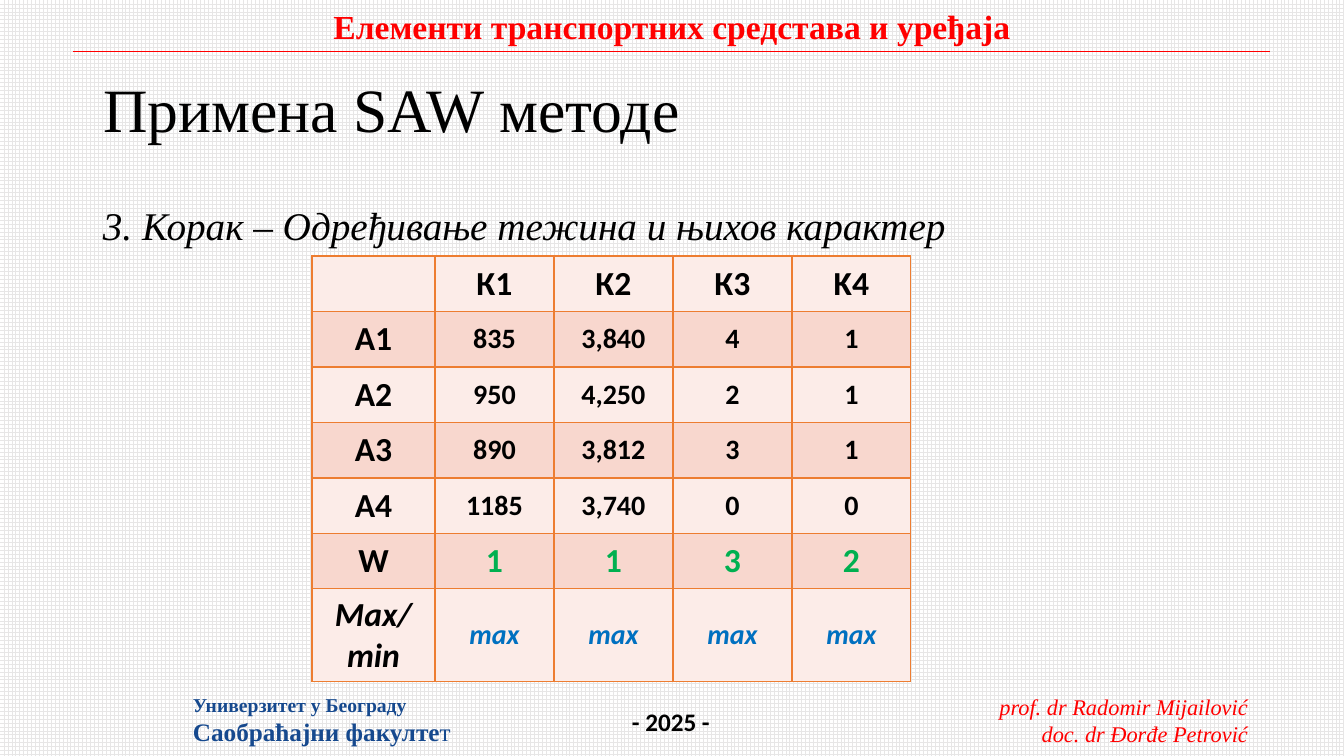
import pptx
import pptx.util
import pptx.dml.color
import pptx.enum.dml
import pptx.enum.shapes
import pptx.enum.text
import pptx.oxml
import pptx.oxml.ns

# Content
TITLE = "Примена SAW методе"
STEP = "3. Корак – Одређивање тежина и њихов карактер"
COURSE = "Елементи транспортних средстава и уређаја"
YEAR = "- 2025 -"
AUTHORS = ["prof. dr Radomir Mijailović", "doc. dr Đorđe Petrović"]
UNIVERSITY = "Универзитет у Београду"
FACULTY = ("Саобраћајни факулте", "т")
CRITERIA = [
    ["", "К1", "К2", "К3", "K4"],
    ["А1", "835", "3,840", "4", "1"],
    ["А2", "950", "4,250", "2", "1"],
    ["А3", "890", "3,812", "3", "1"],
    ["A4", "1185", "3,740", "0", "0"],
    ["W", "1", "1", "3", "2"],
    ["Max/min", "max", "max", "max", "max"],
]
WEIGHT_ROW, GOAL_ROW = 5, 6

COLORS = {
    "black": "000000", "white": "FFFFFF", "grid": "E7E6E6", "red": "FF0000",
    "navy": "16498E", "green": "00B050", "blue": "0070C0",
    "light": "FCECE8", "dark": "F8D7CE", "border": "ED7D31",
}
SERIF, SANS = "Times New Roman", "Calibri"
ALIGN = pptx.enum.text.PP_ALIGN
MIDDLE = pptx.enum.text.MSO_ANCHOR.MIDDLE


def px(length):
    return pptx.util.Emu(round(length * 914400 / 100.8))


def rgb(name):
    return pptx.dml.color.RGBColor.from_string(COLORS[name])


def style(para, size, color, face=SERIF, bold=False, italic=False, align=ALIGN.LEFT):
    para.alignment = align
    font = para.font
    font.name, font.size = face, pptx.util.Pt(size)
    font.bold, font.italic = bold, italic
    font.color.rgb = rgb(color)


def add_text(page, place, lines, wrap=False):
    """Add a text box; each line is (text, style options)."""
    box = page.shapes.add_textbox(*map(px, place))
    frame = box.text_frame
    frame.word_wrap = wrap
    for index, (text, options) in enumerate(lines):
        para = frame.add_paragraph() if index else frame.paragraphs[0]
        para.text = text
        style(para, **options)
    return box


def add_borders(cell):
    properties = cell._tc.get_or_add_tcPr()
    for position, side in enumerate(("lnL", "lnR", "lnT", "lnB")):
        line = pptx.oxml.parse_xml(
            f'<a:{side} {pptx.oxml.ns.nsdecls("a")} w="12700"><a:solidFill>'
            f'<a:srgbClr val="{COLORS["border"]}"/></a:solidFill></a:{side}>')
        properties.insert(position, line)


def cell_style(row, column):
    options = dict(size=24, color="black", face=SANS, bold=True,
                   italic=row == GOAL_ROW, align=ALIGN.CENTER)
    if row and column:
        if row == WEIGHT_ROW:
            options["color"] = "green"
        else:
            options["size"] = 20
            if row == GOAL_ROW:
                options["color"] = "blue"
    return options


def add_criteria_table(page):
    left, top, label_width, value_width = 312, 256, 123, 119
    plain_height, goal_height = 333, 93
    row_count, column_count = len(CRITERIA), len(CRITERIA[0])
    width = label_width + value_width * (column_count - 1)
    table = page.shapes.add_table(row_count, column_count, px(left), px(top),
                                  px(width), px(plain_height + goal_height)).table
    table.first_row = table.horz_banding = False
    for column, item in enumerate(table.columns):
        item.width = px(value_width if column else label_width)
    for row, item in enumerate(table.rows):
        item.height = px(goal_height if row == GOAL_ROW else plain_height / GOAL_ROW)
        for column, text in enumerate(CRITERIA[row]):
            cell = table.cell(row, column)
            cell.text = text
            cell.vertical_anchor = MIDDLE
            cell.fill.solid()
            cell.fill.fore_color.rgb = rgb("dark" if row % 2 else "light")
            style(cell.text_frame.paragraphs[0], **cell_style(row, column))
            add_borders(cell)


def main():
    deck = pptx.Presentation()
    deck.slide_width, deck.slide_height = px(1344), px(756)
    page = deck.slides.add_slide(deck.slide_layouts[5])

    # Background grid
    fill = page.background.fill
    fill.patterned()
    fill.pattern = pptx.enum.dml.MSO_PATTERN.LARGE_GRID
    fill.fore_color.rgb = rgb("grid")
    fill.back_color.rgb = rgb("white")

    # Header
    add_text(page, (320, 1, 704, 50),
             [(COURSE, dict(size=24, color="red", bold=True, align=ALIGN.CENTER))])
    rule = page.shapes.add_connector(pptx.enum.shapes.MSO_CONNECTOR.STRAIGHT,
                                     px(73), px(51), px(1270), px(51))
    rule.line.color.rgb = rgb("red")
    rule.line.width = pptx.util.Pt(0.5)
    rule._element.spPr.append(
        pptx.oxml.parse_xml(f'<a:effectLst {pptx.oxml.ns.nsdecls("a")}/>'))

    # Title and step
    title = page.shapes.title
    title.left, title.top, title.width, title.height = map(px, (93, 40, 1159, 146))
    title.text_frame.text = TITLE
    title.text_frame.vertical_anchor = MIDDLE
    heading = title.text_frame.paragraphs[0]
    heading.line_spacing = 0.9
    style(heading, 44, "black")
    step = add_text(page, (93, 202, 1159, 50),
                    [(STEP, dict(size=28, color="black", italic=True))], wrap=True)
    step.text_frame.paragraphs[0].line_spacing = 0.9

    add_criteria_table(page)

    # Footer
    school = add_text(page, (183, 688, 281, 65),
                      [(UNIVERSITY, dict(size=14, color="navy", bold=True)),
                       (FACULTY[0], dict(size=18, color="navy", bold=True))])
    ending = school.text_frame.paragraphs[1].add_run()
    ending.text = FACULTY[1]
    ending.font.bold = False
    add_text(page, (622, 701, 99, 40),
             [(YEAR, dict(size=18, color="black", face=SANS, bold=True))])
    add_text(page, (985, 688, 273, 65),
             [(name, dict(size=16, color="red", italic=True, align=ALIGN.RIGHT))
              for name in AUTHORS])

    deck.save("out.pptx")


if __name__ == "__main__":
    main()
